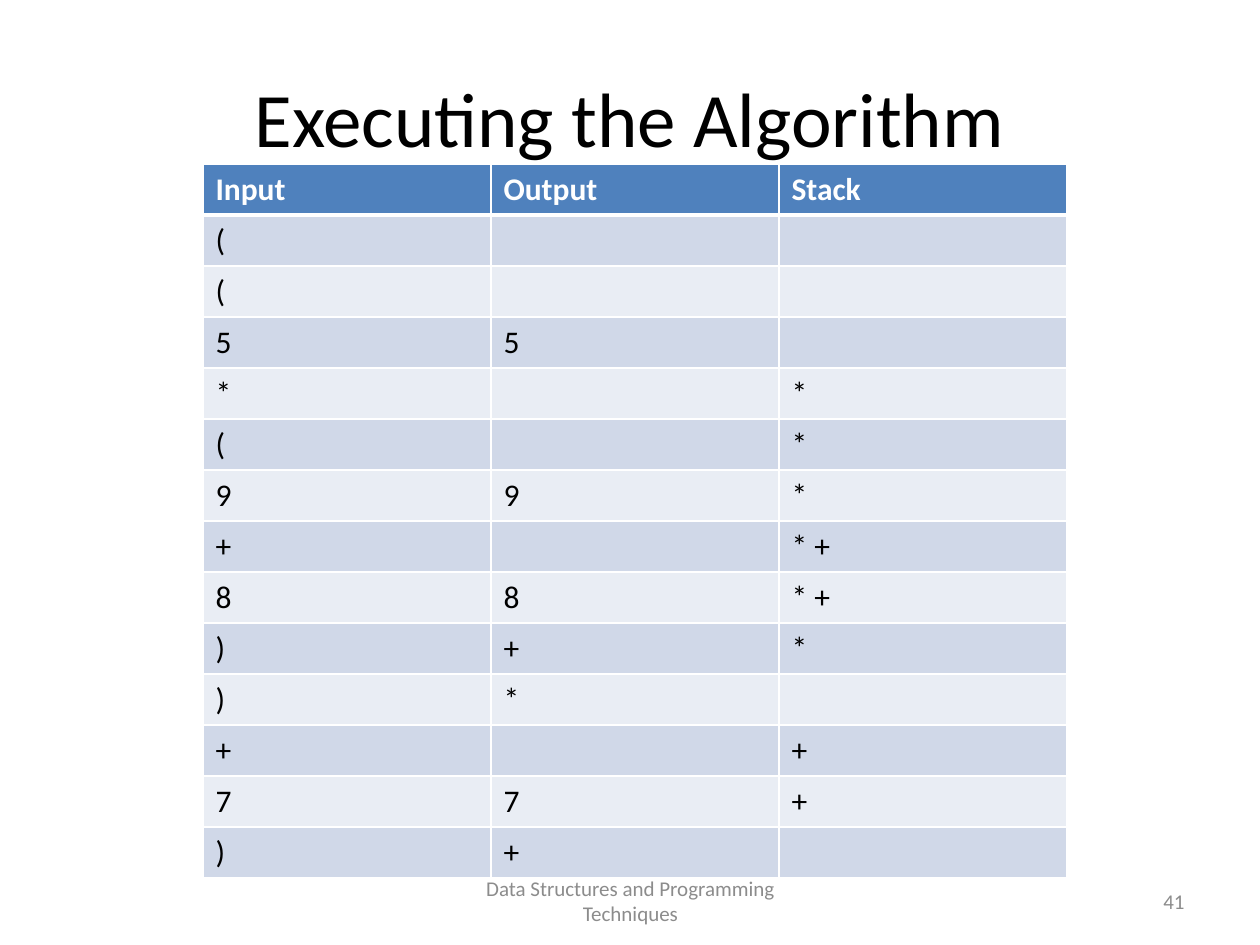
import pptx
import pptx.dml.color
import pptx.enum.text
import pptx.oxml.ns
import pptx.util
import lxml.etree

PX = 914400 // 126
FONT = "Calibri"
COLOURS = {
    "text": "000000", "white": "FFFFFF", "muted": "8C8C8C",
    "header": "4F81BD", "band_dark": "D0D8E8", "band_light": "E9EDF4",
}
ALIGN = pptx.enum.text.PP_ALIGN

HEADINGS = ("Input", "Output", "Stack")
STEPS = [
    ("(", "", ""), ("(", "", ""), ("5", "5", ""), ("*", "", "*"),
    ("(", "", "*"), ("9", "9", "*"), ("+", "", "* +"), ("8", "8", "* +"),
    (")", "+", "*"), (")", "*", ""), ("+", "", "+"), ("7", "7", "+"),
    (")", "+", ""),
]


def rgb(name):
    return pptx.dml.color.RGBColor.from_string(COLOURS[name])


def add_span(para, text, size, colour, bold=False):
    span = para.add_run()
    span.text = text
    span.font.name = FONT
    span.font.size = pptx.util.Pt(size)
    span.font.bold = bold
    span.font.color.rgb = rgb(colour)


def add_text(page, area, text, size, colour, align):
    box = page.shapes.add_textbox(*(value * PX for value in area))
    frame = box.text_frame
    frame.word_wrap = True
    frame.vertical_anchor = pptx.enum.text.MSO_ANCHOR.MIDDLE
    para = frame.paragraphs[0]
    para.alignment = align
    add_span(para, text, size, colour)


def set_borders(cell, widths):
    """Draw white borders; widths are points for left, right, top, bottom."""
    properties = cell._tc.get_or_add_tcPr()
    for index, (side, width) in enumerate(zip("LRTB", widths)):
        line = lxml.etree.Element(pptx.oxml.ns.qn(f"a:ln{side}"),
                                  w=str(pptx.util.Pt(width)))
        fill = lxml.etree.SubElement(line, pptx.oxml.ns.qn("a:solidFill"))
        lxml.etree.SubElement(fill, pptx.oxml.ns.qn("a:srgbClr"),
                              val=COLOURS["white"])
        properties.insert(index, line)


def add_trace_table(page, area):
    rows = [HEADINGS] + STEPS
    table = page.shapes.add_table(len(rows), len(HEADINGS),
                                  *(value * PX for value in area)).table
    for r, texts in enumerate(rows):
        is_header = r == 0
        band = "header" if is_header else "band_dark" if r % 2 else "band_light"
        # The rule under the header row is heavier than the others
        widths = (1, 1, 3 if r == 1 else 1, 3 if is_header else 1)
        for c, text in enumerate(texts):
            cell = table.cell(r, c)
            cell.fill.solid()
            cell.fill.fore_color.rgb = rgb(band)
            set_borders(cell, widths)
            if text:
                add_span(cell.text_frame.paragraphs[0], text, 18,
                         "white" if is_header else "text", is_header)


def add_footer(page, area):
    left, top, width, height = area
    add_text(page, (left + 368, top, 399, height),
             "Data Structures and Programming Techniques", 12, "muted", ALIGN.CENTER)
    add_text(page, (left + width - 294, top, 294, height),
             "41", 12, "muted", ALIGN.RIGHT)


def main():
    deck = pptx.Presentation()
    deck.slide_width, deck.slide_height = 1260 * PX, 945 * PX
    page = deck.slides.add_slide(deck.slide_layouts[6])
    # Title
    add_text(page, (63, 38, 1134, 158), "Executing the Algorithm", 44, "text",
             ALIGN.CENTER)
    # Step-by-step trace
    add_trace_table(page, (203, 164, 864, 714))
    # Footer and page number
    add_footer(page, (63, 876, 1134, 50))
    deck.save("out.pptx")


if __name__ == "__main__":
    main()
